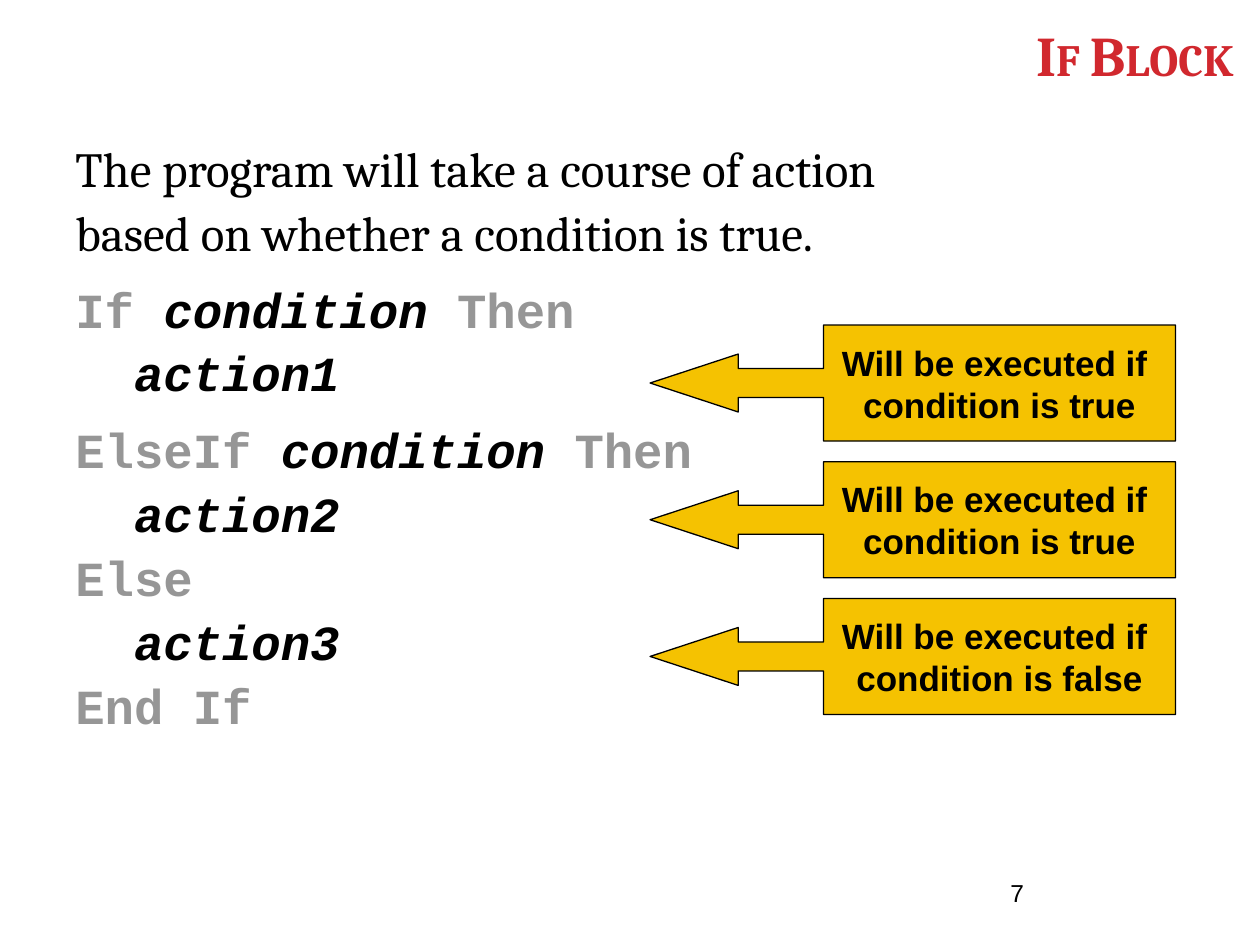
from dataclasses import dataclass

from pptx import Presentation
from pptx import util as u
from pptx.dml.color import RGBColor
from pptx.enum import shapes, text


@dataclass(frozen=True)
class Theme:
    red: str = "D1282E"
    black: str = "000000"
    gray: str = "969696"
    gold: str = "F5C201"
    serif: str = "Cambria"
    sans: str = "Arial"
    mono: str = "Courier New"
    title: int = 32
    body: int = 28
    callout: int = 20
    number: int = 14


T = Theme()
LINE, GAP, BLOCK_GAP = 32, 4.5, 12  # body line height and paragraph gaps, points

INTRO = ["The program will take a course of action",
         "based on whether a condition is true."]
# Each code line: does it open a block, then (text, is placeholder) pieces
CODE = [
    (True, [("If ", False), ("condition ", True), ("Then", False)]),
    (False, [("  action1", True)]),
    (True, [("ElseIf ", False), ("condition ", True), ("Then", False)]),
    (False, [("  action2", True)]),
    (False, [("Else", False)]),
    (False, [("  action3", True)]),
    (False, [("End If", False)]),
]
OUTCOMES = ["true", "true", "false"]


def box(left, top, width, height):
    return [u.Inches(v) for v in (left, top, width, height)]


def add_run(p, content, font, size, color=T.black, bold=False, italic=False,
            small_caps=False):
    r = p.add_run()
    r.text = content
    f = r.font
    f.name, f.size, f.bold, f.italic = font, u.Pt(size), bold, italic
    f.color.rgb = RGBColor.from_string(color)
    if small_caps:
        r._r.get_or_add_rPr().set("cap", "small")


def next_paragraph(tf, first):
    return tf.paragraphs[0] if first else tf.add_paragraph()


def add_text_box(s, *bounds):
    tf = s.shapes.add_textbox(*box(*bounds)).text_frame
    tf.word_wrap = True
    return tf


def add_title(s, content):
    sp = s.shapes.title
    sp.left, sp.top, sp.width, sp.height = box(0.17, 0.14, 9.72, 0.61)
    tf = sp.text_frame
    tf.vertical_anchor = text.MSO_ANCHOR.BOTTOM
    tf.auto_size = text.MSO_AUTO_SIZE.NONE
    p = tf.paragraphs[0]
    p.alignment = text.PP_ALIGN.RIGHT
    add_run(p, content, T.serif, T.title, T.red, bold=True, small_caps=True)


def add_body(s):
    tf = add_text_box(s, 0.5, 1.07, 8.28, 6.01)

    def add_line(first=False, gap=GAP):
        p = next_paragraph(tf, first)
        p.line_spacing = u.Pt(LINE)
        p.space_before = u.Pt(0 if first else gap)
        return p

    for i, line in enumerate(INTRO):
        add_run(add_line(first=i == 0), line, T.serif, T.body)
    for opens_block, pieces in CODE:
        p = add_line(gap=BLOCK_GAP if opens_block else GAP)
        for content, placeholder in pieces:
            add_run(p, content, T.mono, T.body, T.black if placeholder else T.gray,
                    bold=True, italic=placeholder)


def add_callout(s, top, lines):
    sp = s.shapes.add_shape(shapes.MSO_SHAPE.LEFT_ARROW_CALLOUT,
                            *box(5.16, top, 4.17, 0.92))
    for i, value in enumerate((0.25, 0.25, 0.76, 0.67)):
        sp.adjustments[i] = value
    sp.shadow.inherit = False
    sp.fill.solid()
    sp.fill.fore_color.rgb = RGBColor.from_string(T.gold)
    sp.line.color.rgb = RGBColor.from_string(T.black)
    sp.line.width = u.Pt(0.75)
    tf = sp.text_frame
    tf.word_wrap = False
    tf.vertical_anchor = text.MSO_ANCHOR.MIDDLE
    for i, line in enumerate(lines):
        p = next_paragraph(tf, i == 0)
        p.alignment = text.PP_ALIGN.CENTER
        add_run(p, line, T.sans, T.callout, bold=True)


def main():
    prs = Presentation()
    prs.slide_width, prs.slide_height = u.Inches(10), u.Inches(7.5)
    s = prs.slides.add_slide(prs.slide_layouts[5])

    add_title(s, "If Block")
    add_body(s)

    # Slide number
    tf = add_text_box(s, 7.92, 6.92, 2.08, 0.5)
    add_run(tf.paragraphs[0], "7", T.sans, T.number)

    # One callout per action, evenly spaced
    for row, outcome in enumerate(OUTCOMES):
        add_callout(s, 2.58 + row * 1.085,
                    ["Will be executed if ", f"condition is {outcome}"])

    prs.save("out.pptx")


if __name__ == "__main__":
    main()
